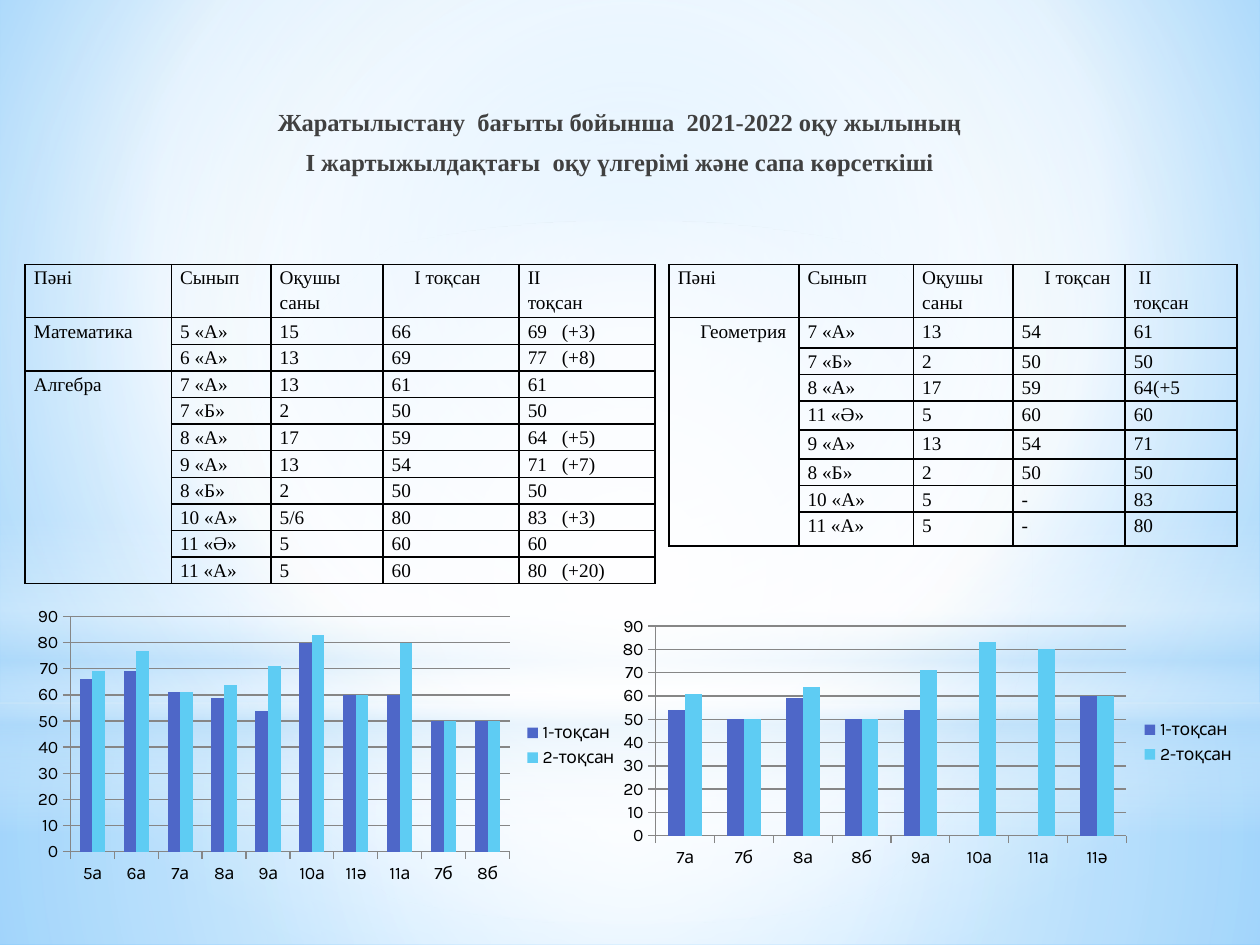
from dataclasses import dataclass
from typing import Any, NamedTuple, Optional

from lxml import etree
from pptx import Presentation
from pptx import util as u
from pptx.chart.data import CategoryChartData
from pptx.dml.color import RGBColor
from pptx.enum import chart as charts, shapes, text
from pptx.oxml import ns


@dataclass(frozen=True)
class Theme:
    ink: str = "000000"
    heading: str = "404040"
    grid: str = "868686"
    white: str = "FFFFFF"
    mist: str = "B4DCFA"
    sky: str = "9ED5FF"
    azure: str = "5BB9FF"
    terms: tuple = ("4E67C8", "5ECCF3")
    serif: str = "Times New Roman"
    sans: str = "Karla"
    heading_size: int = 14
    table_size: int = 11
    chart_size: int = 10


THEME = Theme()


class Box(NamedTuple):
    left: float
    top: float
    width: float
    height: float

    def emu(self) -> tuple:
        return tuple(u.Inches(side) for side in self)


class Glow(NamedTuple):
    box: Box
    stops: list                      # (position, colour, opacity), in percent
    centre: Optional[tuple] = (50, 50, 50, 50)
    outline: Any = shapes.MSO_SHAPE.RECTANGLE


class GradeTable(NamedTuple):
    box: Box
    columns: list
    heights: list
    rows: list
    merged: list                     # (first row, last row) in the subject column


class TermChart(NamedTuple):
    box: Box
    classes: str
    terms: dict


def apply_format(target: Any, values: dict) -> None:
    for name, value in values.items():
        setattr(target, name, value)


def style_font(font: Any, face: str, size: int, colour: str, bold: bool = False) -> None:
    apply_format(font, {"name": face, "size": u.Pt(size), "bold": bold})
    font.color.rgb = RGBColor.from_string(colour)


def set_gradient(owner: Any, stops: list, centre: Optional[tuple]) -> None:
    """Turn the owner's solid fill into a radial or top-down gradient."""
    gradient = etree.Element(ns.qn("a:gradFill"), rotWithShape="1")
    stop_list = etree.SubElement(gradient, ns.qn("a:gsLst"))
    for position, colour, opacity in stops:
        stop = etree.SubElement(stop_list, ns.qn("a:gs"), pos=str(position * 1000))
        tint = etree.SubElement(stop, ns.qn("a:srgbClr"), val=colour)
        etree.SubElement(tint, ns.qn("a:alpha"), val=str(opacity * 1000))
    if centre:
        radial = etree.SubElement(gradient, ns.qn("a:path"))
        radial.set("path", "circle")
        edges = {side: str(share * 1000) for side, share in zip("ltrb", centre)}
        etree.SubElement(radial, ns.qn("a:fillToRect"), edges)
    else:
        etree.SubElement(gradient, ns.qn("a:lin"), ang="5400000", scaled="0")
    owner.replace(owner.find(ns.qn("a:solidFill")), gradient)


def draw_glow(slide: Any, glow: Glow) -> None:
    light = slide.shapes.add_shape(glow.outline, *glow.box.emu())
    light.shadow.inherit = False
    light.line.fill.background()
    light.fill.solid()
    set_gradient(light._element.spPr, glow.stops, glow.centre)


def draw_heading(slide: Any, box: Box, lines: list) -> None:
    frame = slide.shapes.add_textbox(*box.emu()).text_frame
    frame.word_wrap = True
    for number, line in enumerate(lines):
        paragraph = frame.add_paragraph() if number else frame.paragraphs[0]
        apply_format(paragraph, {"alignment": text.PP_ALIGN.CENTER,
                                 "space_before": u.Pt(3), "space_after": u.Pt(3)})
        run = paragraph.add_run()
        run.text = line
        style_font(run.font, THEME.serif, THEME.heading_size, THEME.heading, True)


INDENTED = ("І тоқсан", "Геометрия")


def fill_cell(cell: Any, words: str) -> None:
    apply_format(cell, {"margin_left": u.Inches(0.07), "margin_right": u.Inches(0.07),
                        "margin_top": 0, "margin_bottom": 0})
    cell.text = words
    for paragraph in cell.text_frame.paragraphs:
        paragraph.line_spacing = 1.15
        properties = paragraph._p.get_or_add_pPr()
        if words in INDENTED:
            properties.set("marL", str(u.Inches(0.18)))
        if "\t" in words:
            tabs = etree.SubElement(properties, ns.qn("a:tabLst"))
            etree.SubElement(tabs, ns.qn("a:tab"), pos=str(u.Inches(0.27)), algn="l")
        for run in paragraph.runs:
            style_font(run.font, THEME.serif, THEME.table_size, THEME.ink)
    # Borders come before the fill in the cell properties
    cell.fill.background()
    cell_properties = cell._tc.get_or_add_tcPr()
    for place, side in enumerate(("lnL", "lnR", "lnT", "lnB")):
        border = etree.Element(ns.qn(f"a:{side}"), w=str(u.Pt(1)))
        paint = etree.SubElement(border, ns.qn("a:solidFill"))
        etree.SubElement(paint, ns.qn("a:srgbClr"), val=THEME.ink)
        cell_properties.insert(place, border)


def draw_table(slide: Any, grades: GradeTable) -> None:
    frame = slide.shapes.add_table(len(grades.rows), len(grades.columns), *grades.box.emu())
    table = frame.table
    apply_format(table, {"first_row": False, "horz_banding": False})
    for column, width in zip(table.columns, grades.columns):
        column.width = u.Inches(width)
    for row, height, entries in zip(table.rows, grades.heights, grades.rows):
        row.height = u.Inches(height)
        for cell, words in zip(row.cells, entries):
            fill_cell(cell, words)
    for first, last in grades.merged:
        table.cell(first, 0).merge(table.cell(last, 0))
    frame.height = u.Inches(grades.box.height)


def draw_chart(slide: Any, results: TermChart) -> None:
    data = CategoryChartData()
    data.categories = results.classes.split()
    for term, marks in results.terms.items():
        data.add_series(term, marks)
    chart = slide.shapes.add_chart(charts.XL_CHART_TYPE.COLUMN_CLUSTERED,
                                   *results.box.emu(), data).chart
    apply_format(chart, {"has_title": False, "has_legend": True})
    style_font(chart.font, THEME.sans, THEME.chart_size, THEME.ink)
    apply_format(chart.legend, {"position": charts.XL_LEGEND_POSITION.RIGHT,
                                "include_in_layout": False})
    apply_format(chart.plots[0], {"gap_width": 150, "overlap": 0,
                                  "vary_by_categories": False})
    for series, colour in zip(chart.plots[0].series, THEME.terms):
        series.format.fill.solid()
        series.format.fill.fore_color.rgb = RGBColor.from_string(colour)
    marks_axis, class_axis = chart.value_axis, chart.category_axis
    apply_format(marks_axis, {"minimum_scale": 0, "maximum_scale": 90, "major_unit": 10,
                              "has_major_gridlines": True})
    for axis in (marks_axis, class_axis):
        axis.major_tick_mark = charts.XL_TICK_MARK.OUTSIDE
    for part in (marks_axis, class_axis, marks_axis.major_gridlines):
        part.format.line.width = u.Pt(0.75)
        part.format.line.color.rgb = RGBColor.from_string(THEME.grid)


W, M = THEME.white, THEME.mist
GLOWS = [
    Glow(Box(0, 5.58, 10, 1.92), [(0, W, 91), (37, W, 76), (100, M, 79)]),
    Glow(Box(0, 0, 10, 5.58), [(0, W, 89), (48, W, 62), (100, M, 79)]),
    Glow(Box(0, 4.12, 10, 2.5), [(0, W, 0), (29, W, 30), (45, M, 40), (55, W, 26),
                                 (65, M, 60), (100, W, 0)], None),
    Glow(Box(0, 1.75, 10, 5.58), [(0, W, 100), (56, W, 0)],
         outline=shapes.MSO_SHAPE.OVAL),
]
HEADING = ["Жаратылыстану  бағыты бойынша  2021-2022 оқу жылының",
           "І жартыжылдақтағы  оқу үлгерімі және сапа көрсеткіші"]
HEADER = ("Пәні", "Сынып", "Оқушы саны", "І тоқсан", "ІІ\nтоқсан")
TABLES = [
    GradeTable(
        Box(0.2, 2.1, 5, 2.53), [1.16, 0.79, 0.89, 1.08, 1.08],
        [0.18, 0.18, 0.12, 0.08, 0.18, 0.11, 0.07, 0.18, 0.18, 0.18, 0.05],
        [HEADER,
         ("Математика", "5 «А»", "15", "66", "69\t(+3)"),
         ("", "6 «А»", "13", "69", "77\t(+8)"),
         ("Алгебра", "7 «А»", "13", "61", "61"),
         ("", "7 «Б»", "2", "50", "50"),
         ("", "8 «А»", "17", "59", "64\t(+5)"),
         ("", "9 «А»", "13", "54", "71\t(+7)"),
         ("", "8 «Б»", "2", "50", "50"),
         ("", "10 «А»", "5/6", "80", "83\t(+3)"),
         ("", "11 «Ә»", "5", "60", "60"),
         ("", "11 «А»", "5", "60", "80\t(+20)")],
        [(1, 2), (3, 10)]),
    GradeTable(
        Box(5.31, 2.1, 4.51, 2.22), [1.03, 0.91, 0.79, 0.89, 0.89],
        [0.24, 0.24, 0.2, 0.16, 0.23, 0.23, 0.19, 0.15, 0.27],
        [HEADER[:-1] + (" ІІ\nтоқсан",),
         ("Геометрия", "7 «А»", "13", "54", "61"),
         ("", "7 «Б»", "2", "50", "50"),
         ("", "8 «А»", "17", "59", "64(+5"),
         ("", "11 «Ә»", "5", "60", "60"),
         ("", "9 «А»", "13", "54", "71"),
         ("", "8 «Б»", "2", "50", "50"),
         ("", "10 «А»", "5", "-", "83"),
         ("", "11 «А»", "5", "-", "80")],
        [(1, 8)]),
]
CHARTS = [
    TermChart(Box(0.2, 4.77, 4.8, 2.29), "5а 6а 7а 8а 9а 10а 11ә 11а 7б 8б",
              {"1-тоқсан": (66, 69, 61, 59, 54, 80, 60, 60, 50, 50),
               "2-тоқсан": (69, 77, 61, 64, 71, 83, 60, 80, 50, 50)}),
    TermChart(Box(4.84, 4.85, 5.06, 2.08), "7а 7б 8а 8б 9а 10а 11а 11ә",
              {"1-тоқсан": (54, 50, 59, 50, 54, None, None, 60),
               "2-тоқсан": (61, 50, 64, 50, 71, 83, 80, 60)}),
]


def main() -> None:
    deck = Presentation()
    apply_format(deck, {"slide_width": u.Inches(10), "slide_height": u.Inches(7.5)})
    slide = deck.slides.add_slide(deck.slide_layouts[6])

    # Backdrop
    slide.background.fill.solid()
    set_gradient(slide._element.find(f".//{ns.qn('p:bgPr')}"),
                 [(0, THEME.sky, 100), (60, W, 100), (100, THEME.azure, 100)],
                 (20, 10, 20, 60))
    for glow in GLOWS:
        draw_glow(slide, glow)

    # Heading, then each table with its chart
    draw_heading(slide, Box(0.43, 0.8, 8.98, 5.94), HEADING)
    for grades, results in zip(TABLES, CHARTS):
        draw_table(slide, grades)
        draw_chart(slide, results)
    deck.save("out.pptx")


if __name__ == "__main__":
    main()
